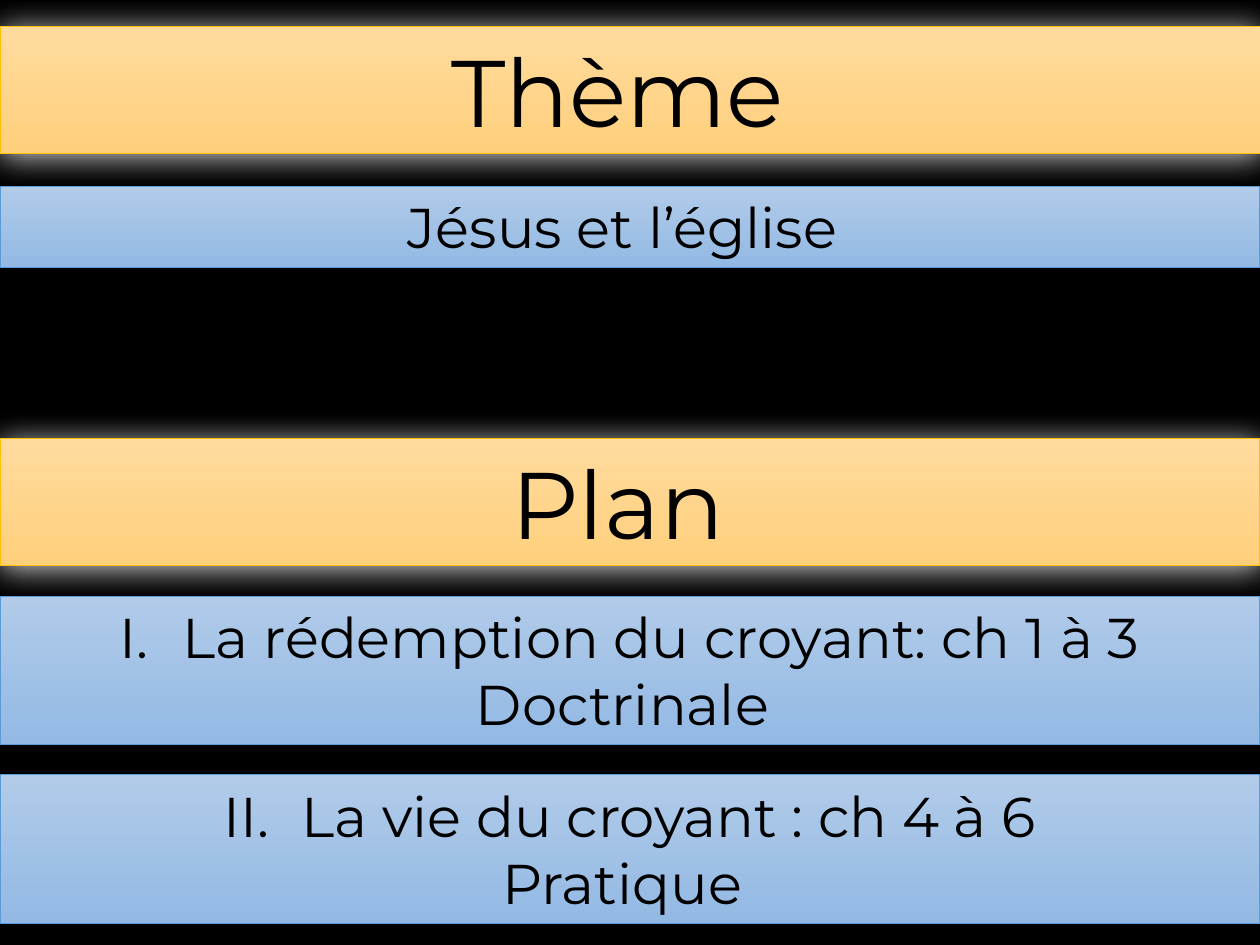
from lxml.etree import SubElement
from pptx import Presentation
from pptx.dml.color import RGBColor as RGB
from pptx.enum.shapes import MSO_SHAPE as Shape
from pptx.enum.text import MSO_ANCHOR as Anchor, MSO_AUTO_SIZE as AutoSize, PP_ALIGN as Align
from pptx.oxml.ns import qn
from pptx.util import Inches, Pt

COLORS = {
    "background": "000000",
    "text": "000000",
    "glow": "FFFFFF",
    "heading": ("FFDB9E", "FFD07C", "FFC000"),
    "detail": ("B1CBE9", "93B9E4", "5B9BD5"),
}
FONT = "Montserrat"
HEADING_H, LINE_H, PAIR_H = 1.01, 0.64, 1.18


def rgb(value):
    """Turn a hex string into a colour."""
    return RGB.from_string(value)


def style_band(sp, top, height, palette):
    """Stretch a shape across the slide with a vertical gradient."""
    sp.left, sp.top, sp.width, sp.height = (Inches(v) for v in (0, top, 10, height))
    start, end, edge = COLORS[palette]
    sp.fill.gradient()
    sp.fill.gradient_angle = 270
    for stop, color in zip(sp.fill.gradient_stops, (start, end)):
        stop.color.rgb = rgb(color)
    sp.line.color.rgb = rgb(edge)
    sp.line.width = Pt(0.5)
    sp.shadow.inherit = False


def write(sp, lines, size):
    """Fill a band with centred lines of text."""
    tf = sp.text_frame
    tf.text = "\n".join(lines)
    tf.word_wrap = True
    tf.auto_size = AutoSize.SHAPE_TO_FIT_TEXT
    tf.vertical_anchor = Anchor.TOP
    for p in tf.paragraphs:
        p.alignment = Align.CENTER
        p.font.name, p.font.size = FONT, Pt(size)
        p.font.color.rgb = rgb(COLORS["text"])


def add_glow(sp):
    """Give a band a soft light shadow."""
    effects = sp._element.spPr.find(qn("a:effectLst"))
    shadow = SubElement(effects, qn("a:outerShdw"), blurRad=str(Inches(0.25)),
                        dist=str(Inches(0.02)), dir="5400000", algn="ctr", rotWithShape="0")
    color = SubElement(shadow, qn("a:srgbClr"), val=COLORS["glow"])
    SubElement(color, qn("a:alpha"), val="80000")


def add_heading(sp, top, text):
    """Make a glowing heading band from a shape."""
    style_band(sp, top, HEADING_H, "heading")
    write(sp, [text], 54)
    add_glow(sp)


def add_rect(slide):
    """Add a plain rectangle, sized later by its band style."""
    return slide.shapes.add_shape(Shape.RECTANGLE, 0, 0, Inches(1), Inches(1))


def add_detail(slide, top, height, *lines):
    """Add a detail band."""
    sp = add_rect(slide)
    style_band(sp, top, height, "detail")
    write(sp, lines, 32)
    return sp


def number_roman(p, start):
    """Number a paragraph with a hanging Roman numeral."""
    pPr = p._p.get_or_add_pPr()
    indent = Inches(0.62)
    pPr.set("marL", str(indent))
    pPr.set("indent", str(-indent))
    bullet = pPr.makeelement(qn("a:buAutoNum"), {"type": "romanUcPeriod", "startAt": str(start)})
    pPr.insert(0, bullet)


def main():
    """Build the theme and plan slide."""
    prs = Presentation()
    prs.slide_width, prs.slide_height = Inches(10), Inches(7.5)
    slide = prs.slides.add_slide(prs.slide_layouts[5])
    slide.background.fill.solid()
    slide.background.fill.fore_color.rgb = rgb(COLORS["background"])

    add_heading(slide.shapes.title, 0.21, "Thème ")
    add_detail(slide, 1.48, LINE_H, "Jésus et l’église ")
    add_heading(add_rect(slide), 3.48, "Plan ")
    add_detail(slide, 4.73, PAIR_H, "I.\tLa rédemption du croyant: ch 1 à 3 Doctrinale ")
    life = add_detail(slide, 6.15, PAIR_H, "La vie du croyant : ch 4 à 6", "Pratique ")
    number_roman(life.text_frame.paragraphs[0], 2)
    prs.save("out.pptx")


if __name__ == "__main__":
    main()
